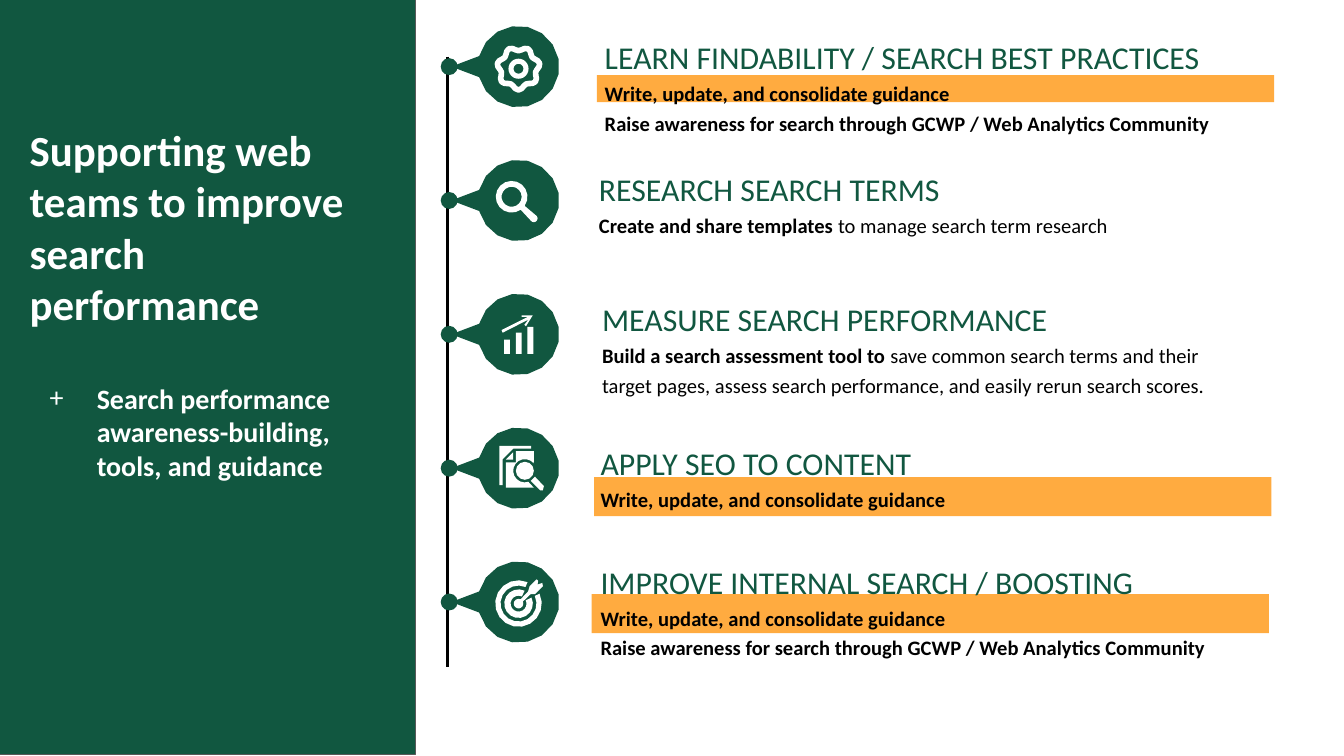
"""Build the slide on supporting web teams to improve search performance."""
import math

from lxml import etree
from pptx import Presentation
from pptx.dml.color import RGBColor
from pptx.enum import shapes, text
from pptx.oxml import ns
from pptx.util import Cm, Pt

TITLE = "Supporting web teams to improve search performance"
SUBTITLE = "Search performance awareness-building, tools, and guidance"
GUIDANCE = [("Write, update, and consolidate guidance", True)]
AWARENESS = [("Raise awareness for search through GCWP / Web Analytics Community", True)]

TOPICS = [
    dict(heading="LEARN FINDABILITY / SEARCH BEST PRACTICES", icon="gear",
         actions=[GUIDANCE, AWARENESS],
         box=(11.18, 0.33, 12.47, 2.41), highlight=(11.28, 1.42, 12.8, 0.51)),
    dict(heading="RESEARCH SEARCH TERMS", icon="magnifier",
         actions=[[("Create and share templates ", True),
                   ("to manage search term research", False)]],
         box=(11.07, 2.82, 13.16, 1.85), highlight=None),
    dict(heading="MEASURE SEARCH PERFORMANCE", icon="growth",
         actions=[[("Build a search assessment tool to ", True),
                   ("save common search terms and their target pages, assess search "
                    "performance, and easily rerun search scores.", False)]],
         box=(11.13, 5.28, 12.8, 2.41), highlight=None),
    dict(heading="APPLY SEO TO CONTENT", icon="document",
         actions=[GUIDANCE],
         box=(11.1, 8, 13.64, 1.85), highlight=(11.23, 9.02, 12.8, 0.74)),
    dict(heading="IMPROVE INTERNAL SEARCH / BOOSTING", icon="target",
         actions=[GUIDANCE, AWARENESS],
         box=(11.1, 10.24, 13.64, 2.41), highlight=(11.18, 11.23, 12.8, 0.74)),
]

THEME = dict(font="Calibri", green="115740", amber="FFAB40", white="FFFFFF",
             black="000000", grey="595959",
             title=23, subtitle=15, heading=17, body=11)

PIN = [[(-1.27, 0), (0, 0, 0.77, 195, 525)]]
DOT = ("OVAL", -1.47, -0.16, 0.32, 0.32)
ICONS = {
    "gear": [
        [[(0, 0.03, 0.37, 90, 450, 0.04)]],
        ("DONUT", -0.19, -0.15, 0.38, 0.38),
    ],
    "magnifier": [
        [[(-0.13, -0.07, 0.3, 55, 395), (0.29, 0.34, 0.07, -45, 135)],
         [(-0.13, -0.07, 0.19, 0, 360)]],
    ],
    "growth": [
        ("RECTANGLE", -0.27, 0.1, 0.11, 0.27),
        ("RECTANGLE", -0.05, -0.03, 0.11, 0.4),
        ("RECTANGLE", 0.17, -0.14, 0.11, 0.51),
        [[(0.06, -0.36), (0.06, -0.33), (0.18, -0.33), (-0.32, -0.08), (-0.3, -0.03),
          (0.19, -0.28), (0.11, -0.18), (0.14, -0.15), (0.27, -0.36)]],
    ],
    "document": [
        [[(-0.36, -0.42), (-0.36, 0.32), (-0.3, 0.32), (-0.3, -0.17), (-0.1, -0.37),
          (0.24, -0.37), (0.24, -0.42)]],
        [[(-0.1, -0.3), (-0.24, -0.16), (-0.1, -0.16)]],
        ("OVAL", -0.05, -0.12, 0.34, 0.34),
        [[(-0.05, -0.32), (-0.05, -0.11), (-0.24, -0.11), (-0.24, 0.37), (0.29, 0.37),
          (0.12, 0.05, 0.22, 72, 320), (0.29, -0.32)]],
        [[(0.31, 0.16), (0.23, 0.24), (0.41, 0.42), (0.46, 0.42), (0.48, 0.34)]],
    ],
    "target": [
        [[(0.34, -0.43), (0.21, -0.3), (0.18, -0.2), (0, 0.03, 0.09, -65, -385),
          (0.23, -0.15), (0.31, -0.15), (0.46, -0.3), (0.45, -0.36), (0.36, -0.33),
          (0.37, -0.4)]],
        [[(0, 0.03, 0.27, -25, 295), (0, 0.03, 0.15, 295, -25)]],
        [[(0, 0.03, 0.44, -25, 293), (0, 0.03, 0.34, 293, -25)]],
    ],
}
GEAR_TEETH, GEAR_STEPS, ARC_DEGREES = 7, 42, 22
PIN_X, FIRST_PIN_Y, PIN_PITCH = 9.8, 1.26, 2.53


def color(name):
    return RGBColor.from_string(THEME[name])


def assign(target, values):
    for key, value in values.items():
        setattr(target, key, value)


def paint(shape, fill, line=None, width=0.75):
    shape.shadow.inherit = False
    if fill:
        shape.fill.solid()
        shape.fill.fore_color.rgb = color(fill)
    else:
        shape.fill.background()
    if line:
        shape.line.color.rgb = color(line)
        shape.line.width = Pt(width)
    else:
        shape.line.fill.background()


def trace(contour):
    for x, y, *arc in contour:
        if not arc:
            yield x, y
            continue
        radius, start, end, *wave = arc
        steps = GEAR_STEPS if wave else math.ceil(abs(end - start) / ARC_DEGREES)
        for step in range(steps + 1):
            angle = math.radians(start + (end - start) * step / steps)
            swell = wave[0] * math.cos(GEAR_TEETH * (angle - math.pi / 2)) if wave else 0
            yield (x + (radius + swell) * math.cos(angle),
                   y + (radius + swell) * math.sin(angle))


def draw(slide, part, x, y, fill, line=None, width=0.75):
    if isinstance(part, tuple):
        preset, dx, dy, breadth, height = part
        shape = slide.shapes.add_shape(getattr(shapes.MSO_SHAPE, preset),
                                       *map(Cm, (x + dx, y + dy, breadth, height)))
        if preset == "DONUT":
            fill, line = "white", None
    else:
        outlines = [[(Cm(x + dx), Cm(y + dy)) for dx, dy in trace(contour)]
                    for contour in part]
        builder = slide.shapes.build_freeform(*outlines[0][0])
        builder.add_line_segments(outlines[0][1:])
        for outline in outlines[1:]:
            builder.move_to(*outline[0])
            builder.add_line_segments(outline[1:])
        shape = builder.convert_to_shape()
    paint(shape, fill, line, width)


def add_frame(slide, box, auto_size):
    frame = slide.shapes.add_textbox(*map(Cm, box)).text_frame
    margins = {f"margin_{side}": Cm(0.25) for side in ("left", "top", "right", "bottom")}
    assign(frame, dict(margins, word_wrap=True, auto_size=auto_size,
                       vertical_anchor=text.MSO_ANCHOR.TOP))
    return frame


def write(paragraph, runs, size, ink, **spacing):
    assign(paragraph, dict(spacing, alignment=text.PP_ALIGN.LEFT))
    for words, bold in runs:
        run = paragraph.add_run()
        run.text = words
        assign(run.font, dict(name=THEME["font"], size=Pt(THEME[size]), bold=bold))
        run.font.color.rgb = color(ink)


def add_plus_bullet(paragraph):
    properties = paragraph._p.get_or_add_pPr()
    properties.set("marL", str(Cm(1.27)))
    properties.set("indent", str(Cm(-0.89)))
    tint = etree.SubElement(properties, ns.qn("a:buClr"))
    etree.SubElement(tint, ns.qn("a:srgbClr"), val=THEME["white"])
    etree.SubElement(properties, ns.qn("a:buFont"), typeface=THEME["font"])
    etree.SubElement(properties, ns.qn("a:buChar"), char="+")


def add_timeline(slide):
    timeline = slide.shapes.add_connector(shapes.MSO_CONNECTOR.STRAIGHT,
                                          Cm(8.46), Cm(1.07), Cm(8.46), Cm(12.6))
    timeline.line.color.rgb = color("black")
    timeline.line.width = Pt(1.5)
    etree.SubElement(timeline._element.spPr, ns.qn("a:effectLst"))


def add_topic(slide, topic, pin_y):
    draw(slide, PIN, PIN_X, pin_y, "green")
    draw(slide, DOT, PIN_X, pin_y, "green")
    paints = (None, "white", 3) if topic["icon"] == "gear" else ("white",)
    for part in ICONS[topic["icon"]]:
        draw(slide, part, PIN_X, pin_y, *paints)
    frame = add_frame(slide, topic["box"], text.MSO_AUTO_SIZE.SHAPE_TO_FIT_TEXT)
    write(frame.paragraphs[0], [(topic["heading"], False)], "heading", "green",
          line_spacing=1.2)
    for action in topic["actions"]:
        write(frame.add_paragraph(), action, "body", "black", line_spacing=1.2)


def main():
    deck = Presentation()
    assign(deck, dict(slide_width=Cm(25.4), slide_height=Cm(14.29)))
    slide = deck.slides.add_slide(deck.slide_layouts[6])

    for topic in TOPICS:
        if topic["highlight"]:
            draw(slide, ("RECTANGLE", *topic["highlight"]), 0, 0, "amber")
    draw(slide, ("RECTANGLE", -0.13, -0.03, 7.98, 14.29), 0, 0, "green", "grey")
    add_timeline(slide)
    for row, topic in enumerate(TOPICS):
        add_topic(slide, topic, FIRST_PIN_Y + row * PIN_PITCH)

    title = add_frame(slide, (0.31, 2.08, 7.04, 3.99), text.MSO_AUTO_SIZE.NONE)
    write(title.paragraphs[0], [(TITLE, True)], "title", "white")
    subtitle = title.add_paragraph()
    write(subtitle, [(SUBTITLE, True)], "subtitle", "white", space_before=Pt(28))
    add_plus_bullet(subtitle)
    deck.save("out.pptx")


if __name__ == "__main__":
    main()
